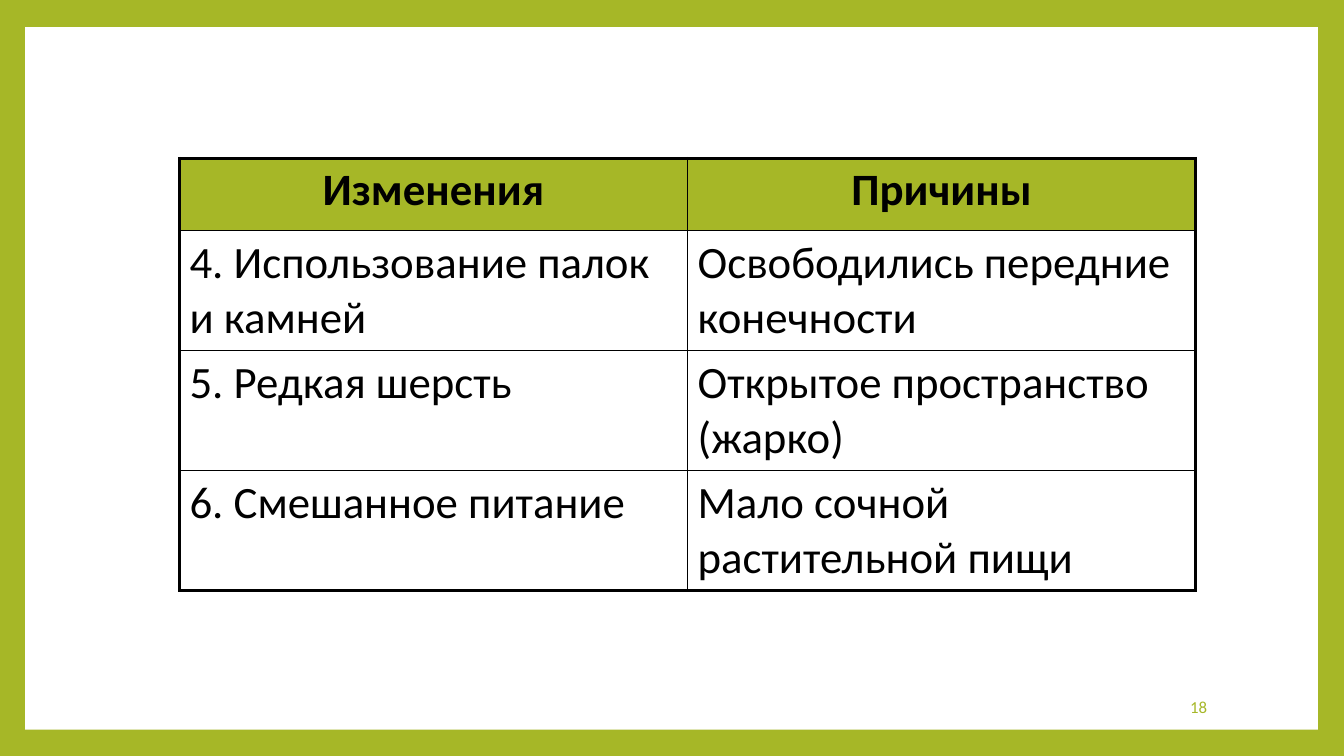
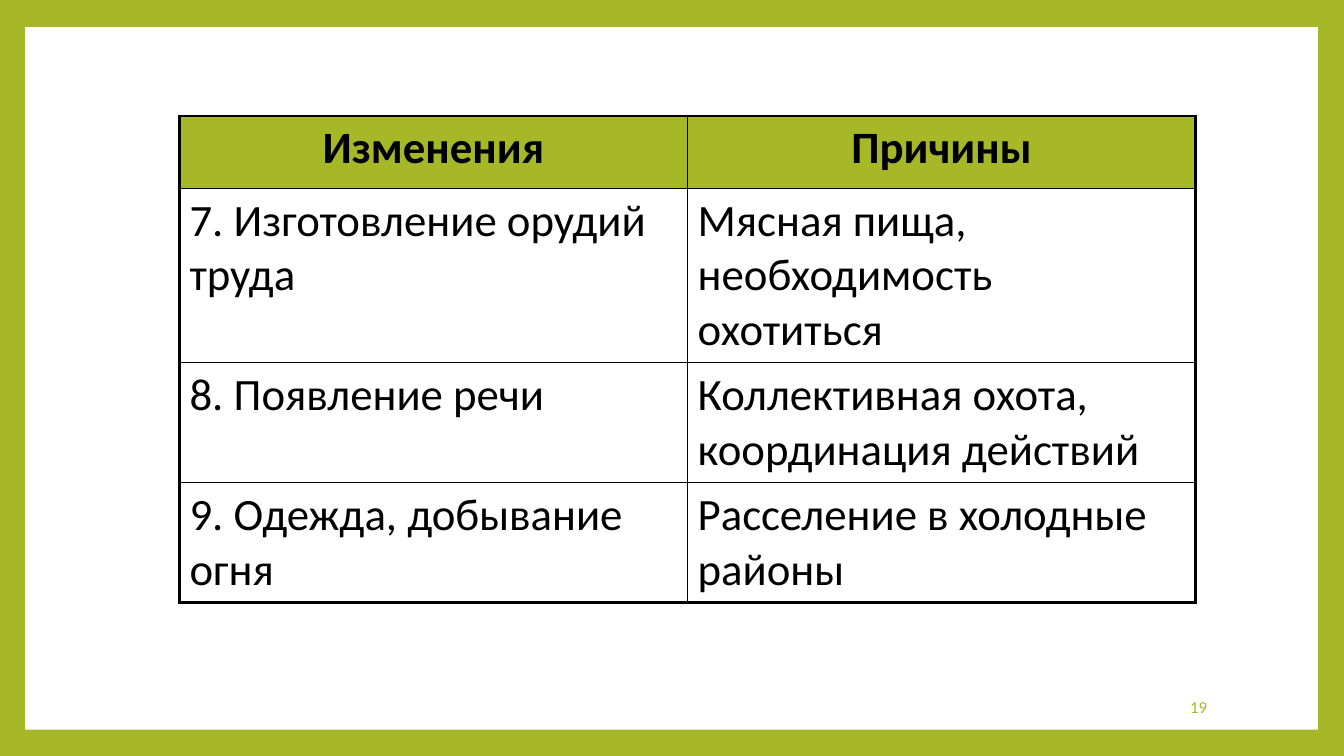
from lxml import etree
from pptx import Presentation
from pptx.dml.color import RGBColor
from pptx.enum.shapes import MSO_SHAPE as Shape
from pptx.enum.text import MSO_ANCHOR as Anchor, PP_ALIGN as Align
from pptx.oxml.ns import qn
from pptx.util import Emu, Pt

GREEN = RGBColor(0xA6, 0xB7, 0x27)
WHITE = RGBColor(0xFF, 0xFF, 0xFF)
BLACK = RGBColor(0x00, 0x00, 0x00)
FONT = "Calibri"
PX = 9144  # EMU per px, 100 px to the inch
SLIDE_SIZE = (1333, 750)
THICK, THIN = 2.25, 1

HEADER = ("Изменения", "Причины")
HEADER_HEIGHT = 72
COLUMN_WIDTH = 504

# Each slide: page number, table top, then (row height, change, reason)
PAGES = [
    (18, 157, [
        (119, "4. Использование палок и камней", "Освободились передние конечности"),
        (119, "5. Редкая шерсть", "Открытое пространство (жарко)"),
        (119, "6. Смешанное питание", "Мало сочной растительной пищи"),
    ]),
    (19, 115, [
        (173, "7. Изготовление орудий труда", "Мясная пища, необходимость охотиться"),
        (119, "8. Появление речи", "Коллективная охота, координация действий"),
        (119, "9. Одежда, добывание огня", "Расселение в холодные районы"),
    ]),
]


def px(*lengths):
    return [Emu(length * PX) for length in lengths]


class Deck:
    """Holds the shared style and the current slide."""

    def __init__(self):
        self.presentation = Presentation()
        self.presentation.slide_width, self.presentation.slide_height = px(*SLIDE_SIZE)
        self.slide = None

    def add_slide(self):
        """Start a slide with a white panel on a green background."""
        self.slide = self.presentation.slides.add_slide(self.presentation.slide_layouts[6])
        background = self.slide.background.fill
        background.solid()
        background.fore_color.rgb = GREEN
        panel = self.slide.shapes.add_shape(Shape.RECTANGLE, *px(25, 27, 1282, 697))
        panel.shadow.inherit = False
        panel.fill.solid()
        panel.fill.fore_color.rgb = WHITE
        panel.line.fill.background()

    def set_text(self, text_frame, text, size, color, align, bold=False):
        text_frame.text = text
        paragraph = text_frame.paragraphs[0]
        paragraph.alignment = align
        font = paragraph.runs[0].font
        font.name, font.size, font.bold = FONT, Pt(size), bold
        font.color.rgb = color

    def borders(self, cell, widths):
        """Draw black cell borders; widths maps a side (L, R, T, B) to points."""
        properties = cell._tc.get_or_add_tcPr()
        for side, width in widths.items():
            line = etree.SubElement(properties, qn(f"a:ln{side}"), w=str(Pt(width)))
            fill = etree.SubElement(line, qn("a:solidFill"))
            etree.SubElement(fill, qn("a:srgbClr"), val=str(BLACK))

    def table(self, left, top, rows):
        """Draw a table whose outer frame is thick and inner lines are thin."""
        last_row, last_column = len(rows) - 1, len(HEADER) - 1
        heights = [height for height, *_ in rows]
        table = self.slide.shapes.add_table(
            len(rows), len(HEADER),
            *px(left, top, COLUMN_WIDTH * len(HEADER), sum(heights))).table
        table.first_row = table.horz_banding = False
        for column in table.columns:
            column.width = Emu(COLUMN_WIDTH * PX)
        for i, (height, *texts) in enumerate(rows):
            table.rows[i].height = Emu(height * PX)
            is_header = i == 0
            for j, text in enumerate(texts):
                cell = table.cell(i, j)
                self.set_text(cell.text_frame, text, 32, BLACK,
                              Align.CENTER if is_header else Align.LEFT, is_header)
                self.borders(cell, {
                    "L": THICK if j == 0 else THIN,
                    "R": THICK if j == last_column else THIN,
                    "T": THICK if is_header else THIN,
                    "B": THICK if i == last_row else THIN,
                })
                if is_header:
                    cell.fill.solid()
                    cell.fill.fore_color.rgb = GREEN
                else:
                    cell.fill.background()

    def page_number(self, number):
        text_frame = self.slide.shapes.add_textbox(*px(1020, 681, 187, 40)).text_frame
        text_frame.word_wrap = True
        text_frame.vertical_anchor = Anchor.MIDDLE
        self.set_text(text_frame, str(number), 12, GREEN, Align.RIGHT)


def main():
    deck = Deck()
    for number, top, rows in PAGES:
        deck.add_slide()
        deck.table(178, top, [(HEADER_HEIGHT, *HEADER), *rows])
        deck.page_number(number)
    deck.presentation.save("out.pptx")


if __name__ == "__main__":
    main()
